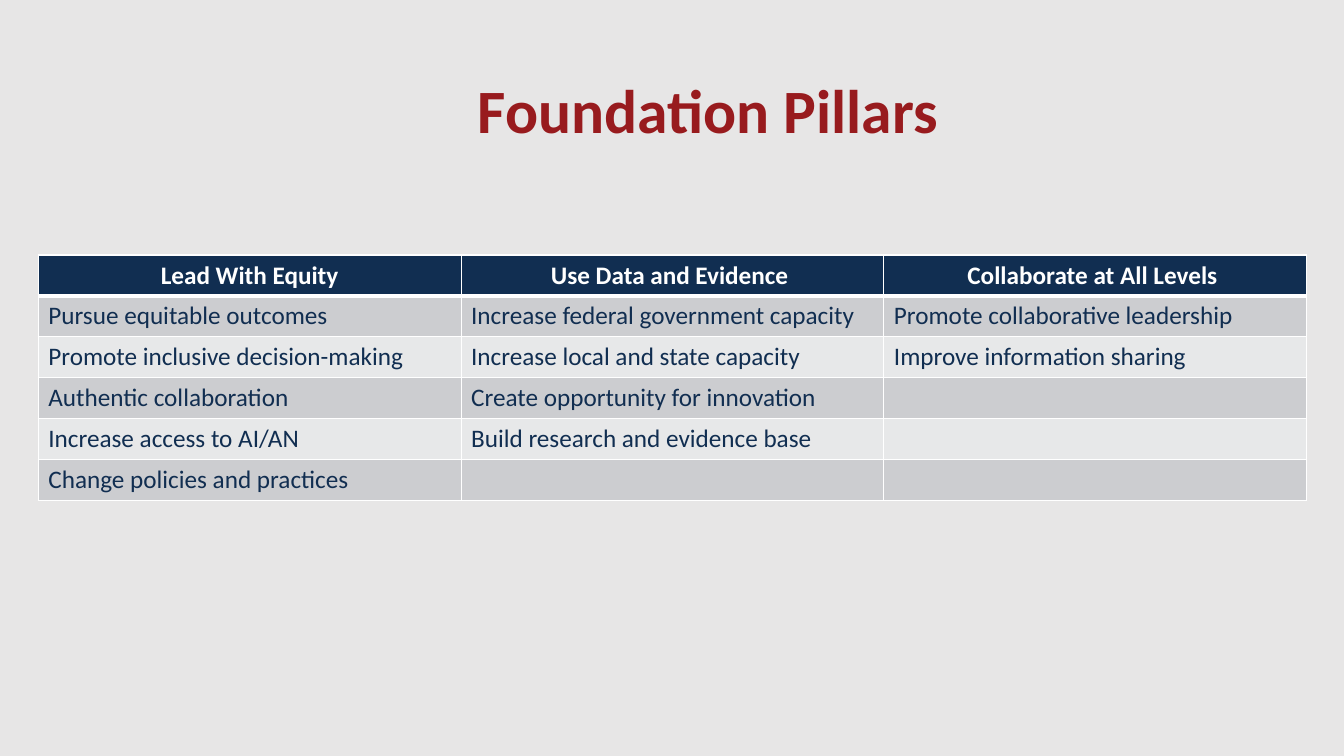
import pptx
import pptx.dml.color
import pptx.enum.text
import pptx.oxml
import pptx.oxml.ns
import pptx.util
from pptx.util import Inches

NAVY, RED, WHITE = "112E51", "981B1E", "FFFFFF"
BANDS = ["CCCDD0", "E7E8E9"]
ALIGN = pptx.enum.text.PP_ALIGN
MIDDLE = pptx.enum.text.MSO_ANCHOR.MIDDLE
ROWS = [
    ["Lead With Equity", "Use Data and Evidence ", "Collaborate at All Levels "],
    ["Pursue equitable outcomes", "Increase federal government capacity",
     "Promote collaborative leadership"],
    ["Promote inclusive decision-making", "Increase local and state capacity",
     "Improve information sharing"],
    ["Authentic collaboration", "Create opportunity for innovation", ""],
    ["Increase access to AI/AN", "Build research and evidence base", ""],
    ["Change policies and practices", "", ""],
]


def paint(color, code):
    """Set a colour from a hex string."""
    color.rgb = pptx.dml.color.RGBColor.from_string(code)


def fill(part, code):
    """Give a part a solid fill."""
    part.fill.solid()
    paint(part.fill.fore_color, code)


def write(frame, text, size=18, color=NAVY, bold=False, align=ALIGN.LEFT, space=1.0):
    """Write one formatted paragraph into a text frame."""
    para = frame.paragraphs[0]
    para.alignment = align
    para.line_spacing = space
    para.font.size = pptx.util.Pt(size)
    if text:
        run = para.add_run()
        run.text = text
        run.font.name = "Calibri"
        run.font.size = pptx.util.Pt(size)
        run.font.bold = bold
        paint(run.font.color, color)


def border(cell, side, width):
    """Draw one white edge of a cell, with its width in points."""
    cell._tc.get_or_add_tcPr().append(pptx.oxml.parse_xml(
        f'<a:{side} {pptx.oxml.ns.nsdecls("a")} w="{pptx.util.Pt(width)}">'
        f'<a:solidFill><a:srgbClr val="{WHITE}"/></a:solidFill></a:{side}>'))


def add_title(slide, left, top, width, height):
    """Place the slide title in its box."""
    title = slide.shapes.title
    title.left, title.top, title.width, title.height = left, top, width, height
    title.text_frame.vertical_anchor = MIDDLE
    title.text_frame.word_wrap = True
    write(title.text_frame, "Foundation Pillars", size=44, color=RED, bold=True,
          align=ALIGN.CENTER, space=0.9)


def add_grid(slide, left, top, width, height):
    """Place the table of pillars in its box."""
    table = slide.shapes.add_table(
        len(ROWS), len(ROWS[0]), left, top, width, height).table
    for i, row in enumerate(ROWS):
        head = i == 0
        for j, text in enumerate(row):
            cell = table.cell(i, j)
            for side in ("lnL", "lnR", "lnT", "lnB"):
                thick = (head and side == "lnB") or (i == 1 and side == "lnT")
                border(cell, side, 3 if thick else 1)
            fill(cell, NAVY if head else BANDS[(i - 1) % 2])
            write(cell.text_frame, text, color=WHITE if head else NAVY, bold=head,
                  align=ALIGN.CENTER if head else ALIGN.LEFT)


def main():
    """Build and save the slide."""
    deck = pptx.Presentation()
    deck.slide_width, deck.slide_height = Inches(13.33), Inches(7.5)
    slide = deck.slides.add_slide(deck.slide_layouts.get_by_name("Title Only"))
    fill(slide.background, "E7E6E6")
    add_title(slide, Inches(1.58), Inches(0.4), Inches(10.89), Inches(1.45))
    add_grid(slide, Inches(0.38), Inches(2.53), Inches(12.58), Inches(2.43))
    deck.save("out.pptx")


if __name__ == "__main__":
    main()
